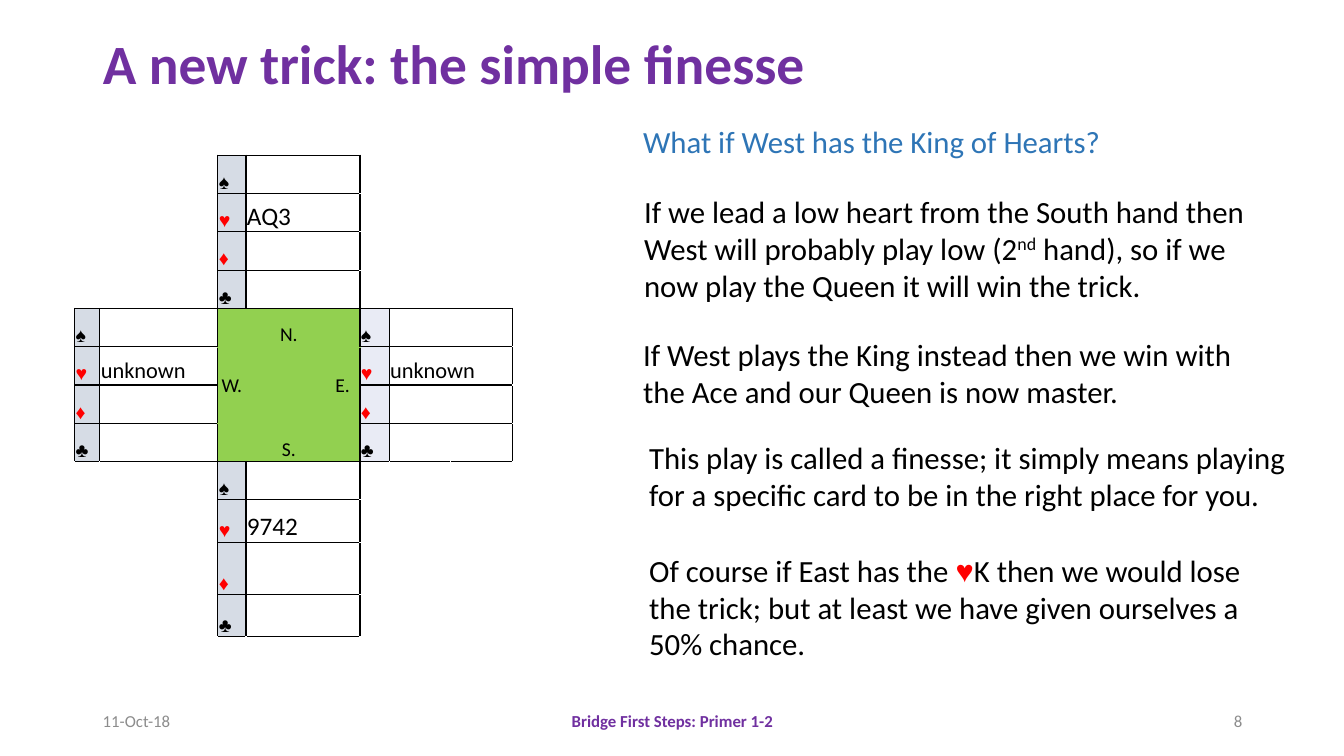
from dataclasses import dataclass

from lxml.etree import SubElement
from pptx import Presentation
from pptx.dml.color import RGBColor
from pptx.enum.text import MSO_ANCHOR, MSO_AUTO_SIZE, PP_ALIGN
from pptx.oxml.ns import qn
from pptx.util import Inches, Pt


@dataclass(frozen=True)
class Theme:
    font: str = "Calibri"
    suit_font: str = "Arial"
    ink: str = "000000"
    purple: str = "7030A0"
    blue: str = "2E75B6"
    red: str = "FF0000"
    grey: str = "8C8C8C"
    felt: str = "92D050"
    tint: str = "D6DCE5"
    east_tint: str = "E9EBF5"
    title: float = 39.6
    body: float = 22
    holding: float = 18
    unknown: float = 16
    suit: float = 14
    footer: float = 12
    line: float = 1
    thin_line: float = 0.25


class BridgeSlide:
    # side: (row step, column step, opposite side), in the order the schema asks for
    SIDES = {"L": (0, -1, "R"), "R": (0, 1, "L"), "T": (-1, 0, "B"), "B": (1, 0, "T")}

    def __init__(self, deck, theme):
        self.theme = theme
        self.slide = deck.slides.add_slide(deck.slide_layouts[5])
        self.edges = {}

    def run(self, paragraph, words, size, color=None, font=None, bold=False, raised=False):
        run = paragraph.add_run()
        run.text = words
        run.font.size = Pt(size)
        run.font.name = font or self.theme.font
        run.font.bold = bold
        run.font.color.rgb = RGBColor.from_string(color or self.theme.ink)
        if raised:
            run.font._element.set("baseline", "30000")

    def title(self, words, left, top, width, height):
        heading = self.slide.shapes.title
        heading.left, heading.top = Inches(left), Inches(top)
        heading.width, heading.height = Inches(width), Inches(height)
        frame = heading.text_frame
        frame.auto_size = MSO_AUTO_SIZE.NONE
        frame.vertical_anchor = MSO_ANCHOR.MIDDLE
        paragraph = frame.paragraphs[0]
        paragraph.alignment = PP_ALIGN.LEFT
        paragraph.line_spacing = 0.9
        self.run(paragraph, words, self.theme.title, self.theme.purple, bold=True)

    def text(self, left, top, width, height, runs, size,
             align=PP_ALIGN.LEFT, anchor=MSO_ANCHOR.TOP):
        box = self.slide.shapes.add_textbox(
            Inches(left), Inches(top), Inches(width), Inches(height))
        frame = box.text_frame
        frame.word_wrap = True
        frame.vertical_anchor = anchor
        paragraph = frame.paragraphs[0]
        paragraph.alignment = align
        for words, style in runs:
            self.run(paragraph, words, size, **style)

    def grid(self, left, top, columns, rows):
        frame = self.slide.shapes.add_table(
            len(rows), len(columns), Inches(left), Inches(top),
            Inches(sum(columns)), Inches(sum(rows)))
        self.table = frame.table
        self.table.first_row = self.table.horz_banding = False
        for column, width in zip(self.table.columns, columns):
            column.width = Inches(width)
        for row, height in zip(self.table.rows, rows):
            row.height = Inches(height)
        for cell in self.table.iter_cells():
            cell.fill.background()
            cell.margin_left = cell.margin_right = cell.margin_top = Inches(0.01)
            cell.margin_bottom = 0
            # Keeps an empty cell from stretching its row
            ending = cell.text_frame.paragraphs[0]._p.get_or_add_endParaRPr()
            ending.set("sz", "1200")

    def cell(self, row, col, words="", size=None, color=None, font=None, fill=None,
             span=(1, 1), align=PP_ALIGN.LEFT, anchor=MSO_ANCHOR.BOTTOM, soft_sides=""):
        cell = self.table.cell(row, col)
        if span != (1, 1):
            cell.merge(self.table.cell(row + span[0] - 1, col + span[1] - 1))
        if fill:
            cell.fill.solid()
            cell.fill.fore_color.rgb = RGBColor.from_string(fill)
        cell.vertical_anchor = anchor
        paragraph = cell.text_frame.paragraphs[0]
        paragraph.alignment = align
        if words:
            self.run(paragraph, words, size, color, font)
        self.outline(row, col, span, soft_sides)
        return cell

    def outline(self, row, col, span, soft_sides):
        """Note the cell's four edges, on the neighbouring cells as well."""
        theme = self.theme
        block = {(row + r, col + c) for r in range(span[0]) for c in range(span[1])}
        for r, c in block:
            for side, (down, across, opposite) in self.SIDES.items():
                edge = ((theme.felt, theme.thin_line) if side in soft_sides
                        else (theme.ink, theme.line))
                neighbour = (r + down, c + across)
                if neighbour not in block:
                    self.edges[neighbour, opposite] = edge
                if neighbour not in block or (r, c) == (row, col):
                    self.edges[(r, c), side] = edge

    def draw_edges(self):
        for r in range(len(self.table.rows)):
            for c in range(len(self.table.columns)):
                properties = self.table.cell(r, c)._tc.get_or_add_tcPr()
                edges = [(side, self.edges[(r, c), side])
                         for side in self.SIDES if ((r, c), side) in self.edges]
                for place, (side, (color, width)) in enumerate(edges):
                    line = SubElement(properties, qn(f"a:ln{side}"), w=str(Pt(width)))
                    fill = SubElement(line, qn("a:solidFill"))
                    SubElement(fill, qn("a:srgbClr"), val=color)
                    properties.insert(place, line)

    def hand(self, row, col, holding, size, tint, span=1):
        theme = self.theme
        for step, suit in enumerate("♠♥♦♣"):
            color = theme.red if suit in "♥♦" else theme.ink
            self.cell(row + step, col, suit, theme.suit, color, theme.suit_font, tint)
            self.cell(row + step, col + 1, holding if suit == "♥" else "", size,
                      span=(1, span))

    def seat(self, row, col, words, **layout):
        return self.cell(row, col, words, self.theme.suit, fill=self.theme.felt, **layout)


def main():
    theme = Theme()
    deck = Presentation()
    deck.slide_width, deck.slide_height = Inches(13.33), Inches(7.5)
    page = BridgeSlide(deck, theme)
    page.title("A new trick: the simple finesse", 0.92, 0.4, 11.5, 0.52)

    # The four hands around the table
    page.grid(0.44, 1.26,
              [0.3, 0.25, 1.17, 0.28, 1.13, 0.29] + [0.61] * 3,
              [0.28] + [0.38] * 9 + [0.42, 0.52, 0.42, 0.3])
    page.hand(1, 3, "AQ3", theme.holding, theme.tint)
    page.hand(5, 1, "unknown", theme.unknown, theme.tint)
    page.hand(5, 5, "unknown", theme.unknown, theme.east_tint, span=2)
    page.hand(9, 3, "9742", theme.holding, theme.tint)

    # Compass seats on the green felt
    middle, center = MSO_ANCHOR.MIDDLE, PP_ALIGN.CENTER
    page.seat(5, 3, "N.", span=(1, 2), align=center, soft_sides="B")
    page.seat(6, 3, "W.", span=(2, 1), align=center, anchor=middle, soft_sides="TRB")
    east = page.seat(6, 4, "E.", span=(2, 1), align=PP_ALIGN.RIGHT, anchor=middle,
                     soft_sides="LTB")
    east.margin_right = Inches(0.1)
    page.seat(8, 3, "S.", span=(1, 2), align=center, soft_sides="T")
    page.draw_edges()

    # Explanation
    explanation = [
        (6.28, 1.17, 5.76, 0.47,
         [("What if West has the King of Hearts?", {"color": theme.blue})]),
        (6.29, 1.86, 6.47, 1.21,
         [("If we lead a low heart from the South hand then West will probably play low (2", {}),
          ("nd", {"raised": True}),
          (" hand), so if we now play the Queen it will win the trick.", {})]),
        (6.28, 3.28, 6.38, 0.84,
         [("If West plays the King instead then we win with the Ace and our Queen "
           "is now master.", {})]),
        (6.34, 4.3, 6.6, 0.84,
         [("This play is called a finesse; it simply means playing for a specific card "
           "to be in the right place for you.", {})]),
        (6.34, 5.42, 6.45, 1.21,
         [("Of course if East has the ", {}),
          ("♥", {"color": theme.red, "font": theme.suit_font}),
          ("K then we would lose the trick; but at least we have given ourselves "
           "a 50% chance.", {})]),
    ]
    for left, top, width, height, runs in explanation:
        page.text(left, top, width, height, runs, theme.body)

    # Footer
    for left, width, words, style, align in [
        (0.92, 3, "11-Oct-18", {"color": theme.grey}, PP_ALIGN.LEFT),
        (4.42, 4.5, "Bridge First Steps: Primer 1-2",
         {"color": theme.purple, "bold": True}, center),
        (9.42, 3, "8", {"color": theme.grey}, PP_ALIGN.RIGHT),
    ]:
        page.text(left, 6.95, width, 0.4, [(words, style)], theme.footer, align, middle)

    deck.save("out.pptx")


if __name__ == "__main__":
    main()
